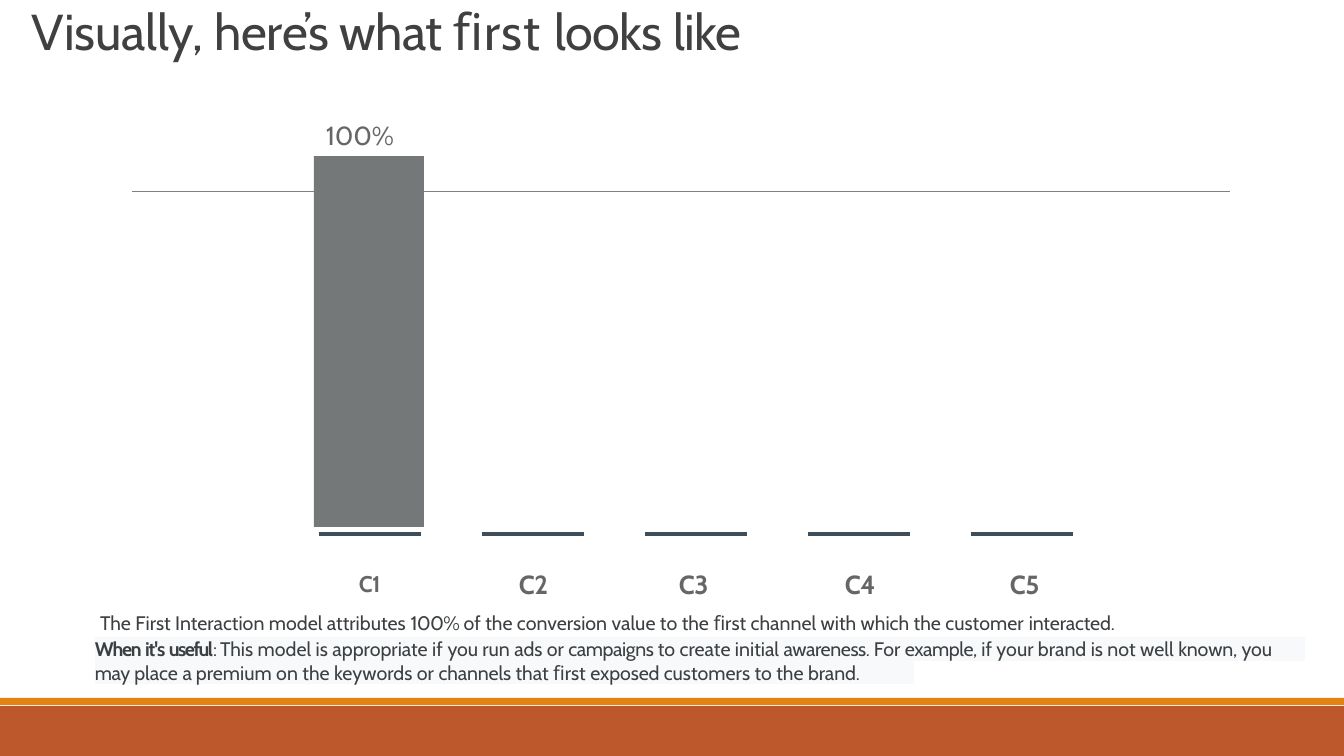
from dataclasses import dataclass

from pptx import Presentation
from pptx.dml.color import RGBColor as RGB
from pptx.enum.shapes import MSO_CONNECTOR as CONN, MSO_SHAPE as SHAPE
from pptx.enum.text import MSO_ANCHOR as ANCHOR, MSO_AUTO_SIZE as AUTO, PP_ALIGN as ALIGN
from pptx.oxml.ns import qn
from pptx.util import Emu, Pt
from lxml import etree


@dataclass(frozen=True)
class Theme:
    font: str = "Cabin"
    title: str = "404040"
    label: str = "666666"
    body: str = "3C4043"
    bar: str = "757879"
    tick: str = "3E4D5A"
    rule: str = "808080"
    white: str = "FFFFFF"
    highlight: str = "F7F9FA"
    footer: str = "BD582C"
    accent: str = "E48312"
    title_size: float = 36
    label_size: float = 18.7
    first_label_size: float = 28
    body_size: float = 14


def px(n):
    return Emu(round(n * 914400 / 100.8))


class SlideBuilder:
    def __init__(self, prs, theme):
        self.theme = theme
        self.slide = prs.slides.add_slide(prs.slide_layouts[6])
        self.shapes = self.slide.shapes

    def paint(self, sp, fill):
        sp.shadow.inherit = False
        sp.fill.solid()
        sp.fill.fore_color.rgb = RGB.from_string(fill)
        sp.line.fill.background()
        return sp

    def rect(self, x, y, w, h, fill):
        sp = self.shapes.add_shape(SHAPE.RECTANGLE, px(x), px(y), px(w), px(h))
        return self.paint(sp, fill)

    def outline(self, points, fill):
        builder = self.shapes.build_freeform(*points[0], scale=914400 / 100.8)
        builder.add_line_segments(points[1:], close=True)
        return self.paint(builder.convert_to_shape(), fill)

    def line(self, x1, x2, y, color, width):
        ln = self.shapes.add_connector(CONN.STRAIGHT, px(x1), px(y), px(x2), px(y))
        ln.line.color.rgb = RGB.from_string(color)
        ln.line.width = Pt(width)
        etree.SubElement(ln._element.spPr, qn("a:effectLst"))

    def text_box(self, x, y, w, h, runs, size, color, **style):
        sp = self.shapes.add_textbox(px(x), px(y), px(w), px(h))
        return self.add_text(sp, runs, size, color, **style)

    def add_text(self, sp, runs, size, color, anchor=ANCHOR.TOP, top=2, indent=2, before=1.3):
        tf = sp.text_frame
        tf.word_wrap = True
        tf.auto_size = AUTO.SHAPE_TO_FIT_TEXT
        tf.vertical_anchor = anchor
        tf.margin_left = tf.margin_right = tf.margin_bottom = 0
        tf.margin_top = px(top)
        p = tf.paragraphs[0]
        p.alignment = ALIGN.LEFT
        p.space_before = Pt(before)
        p._p.get_or_add_pPr().set("marL", str(px(indent)))
        for text, spacing, *bold in runs:
            r = p.add_run()
            r.text = text
            r.font.name = self.theme.font
            r.font.size = Pt(size)
            r.font.bold = bool(bold)
            r.font.color.rgb = RGB.from_string(color)
            r._r.get_or_add_rPr().set("spc", str(round(spacing * 100)))
        return p

    def tab_stops(self, p, stops):
        tabs = etree.SubElement(p._p.get_or_add_pPr(), qn("a:tabLst"))
        for stop in stops:
            etree.SubElement(tabs, qn("a:tab"), pos=str(px(stop)), algn="l")


TITLE = [("Visually, ", -0.1), ("here’s ", -0.3), ("what ", -0.5),
         ("ﬁrst ", 0.9), ("looks ", -0.5), ("like", -0.3)]
CHANNELS = [("C1\t", -0.5, True), ("C2\tC3\tC4\tC5", -0.3, True)]
SUMMARY = [
    ("The First Interaction model attributes ", 0), ("100% ", -0.5),
    ("of the conversion value to the ﬁrst channel with which the customer ", 0),
    ("interacted.", -0.1),
]
USEFUL = [
    ("When ", -0.9, True), ("it's ", -0.7, True), ("useful", -1.1, True), (": ", -1.1),
    ("This model is appropriate if ", 0), ("you ", -0.1), ("run ", 0), ("ads ", -0.1),
    ("or ", 0), ("campaigns ", -0.3), ("to create initial ", 0), ("awareness. ", -0.3),
    ("For ", 0), ("example, ", -0.3), ("if your brand is not well ", 0),
    ("known, you ", -0.1), ("may ", -0.3), ("place ", 0), ("a ", -0.4),
    ("premium on the keywords or ", 0), ("channels ", -0.1), ("that ﬁrst ", 0),
    ("exposed ", -0.1), ("customers to the ", 0), ("brand.", -0.1),
]
HIGHLIGHT = [(1305, 637), (95, 637), (95, 684), (914, 684), (914, 661), (1305, 661)]


def main():
    prs = Presentation()
    prs.slide_width, prs.slide_height = px(1344), px(756)
    t = Theme()
    s = SlideBuilder(prs, t)

    s.rect(0, 706, 1344, 50, t.footer)
    s.rect(0, 698, 1344, 7, t.accent)
    s.line(132, 1230, 191, t.rule, 0.5)

    s.rect(314, 156, 110, 371, t.bar)
    for i in range(5):
        x = 319 + 163 * i
        s.line(x, x + 102, 534, t.tick, 2.25)
    s.text_box(324, 117, 70, 33, [("100%", -0.2)], t.label_size, t.label)

    s.text_box(30, -1, 770, 62, TITLE, t.title_size, t.title, anchor=ANCHOR.BOTTOM)

    p = s.text_box(357, 553, 686, 33, CHANNELS, t.label_size, t.label)
    s.tab_stops(p, [160, 320, 486, 651])
    first = p.runs[0]
    first.font.size = Pt(t.first_label_size)
    first._r.get_or_add_rPr().set("baseline", "4000")

    summary = s.rect(100, 606, 1052, 29, t.white)
    s.add_text(summary, SUMMARY, t.body_size, t.body, top=5, indent=0, before=3.9)
    s.outline(HIGHLIGHT, t.highlight)
    s.text_box(93, 635, 1215, 49, USEFUL, t.body_size, t.body)

    prs.save("out.pptx")


if __name__ == "__main__":
    main()
